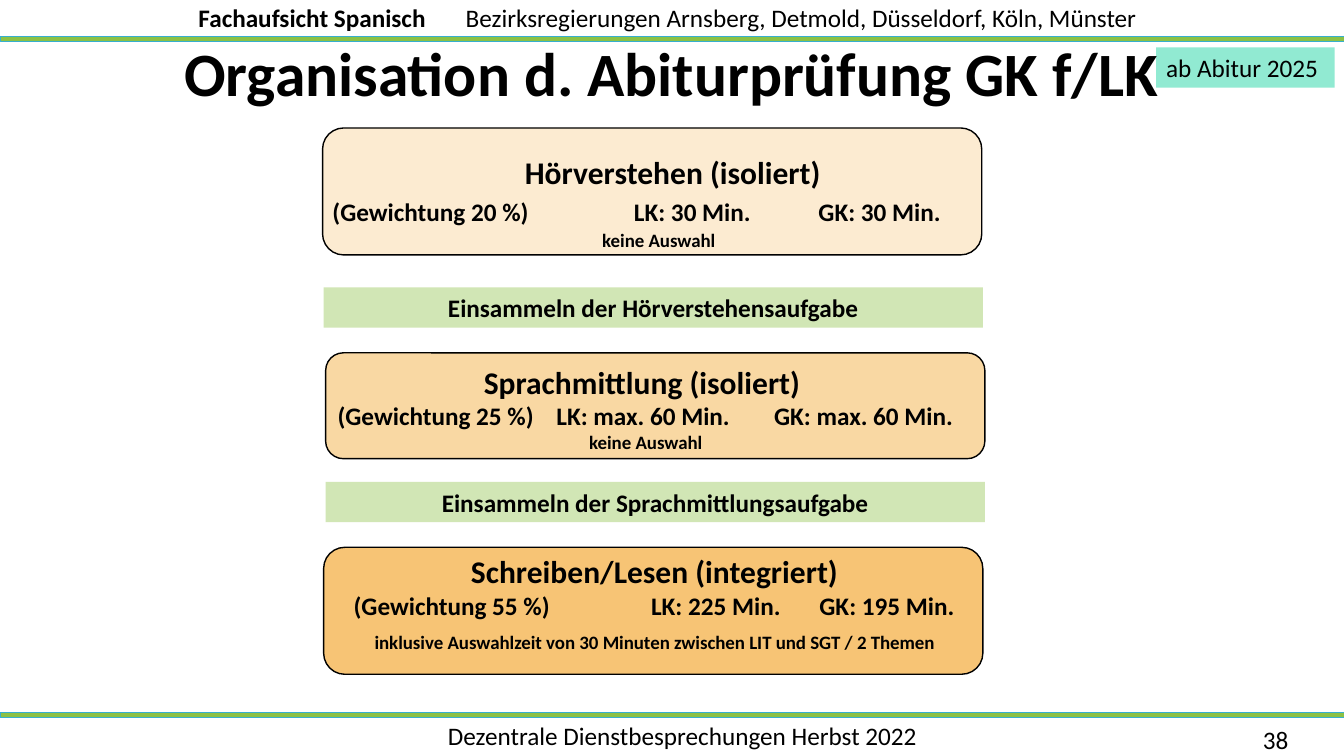
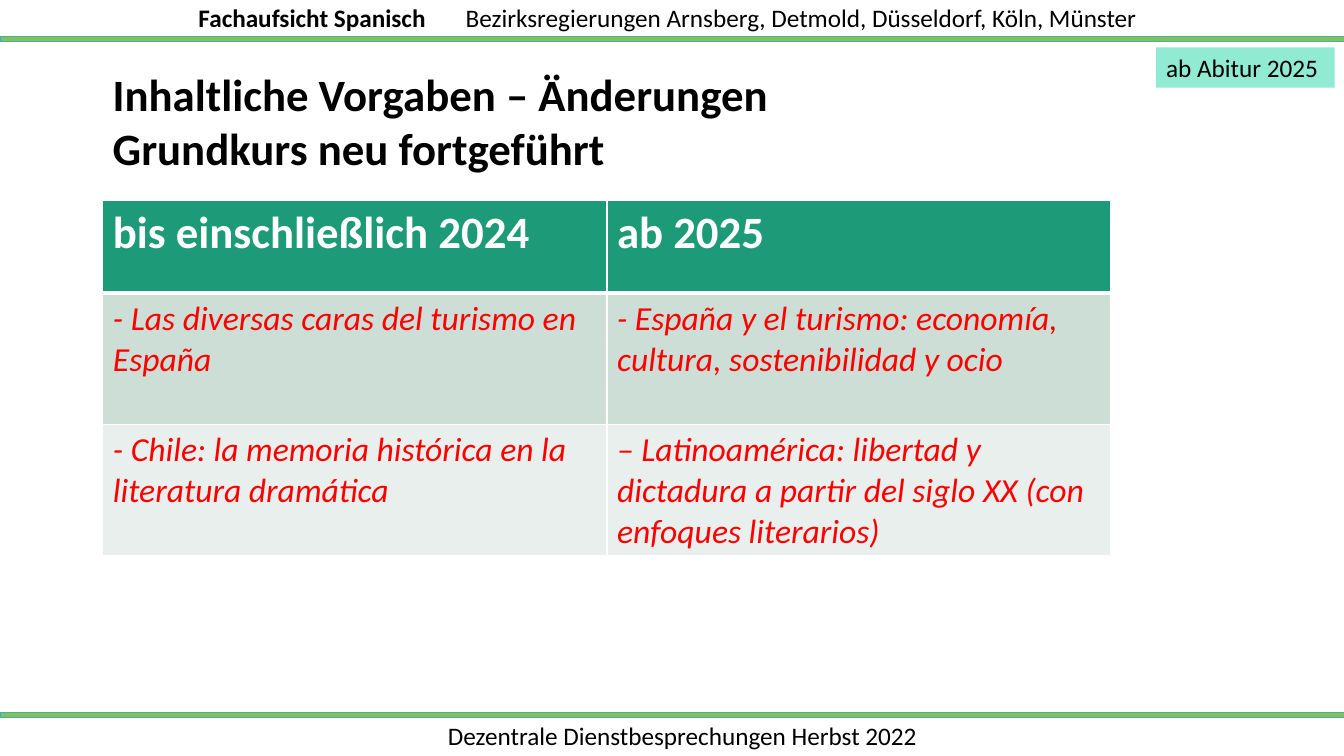
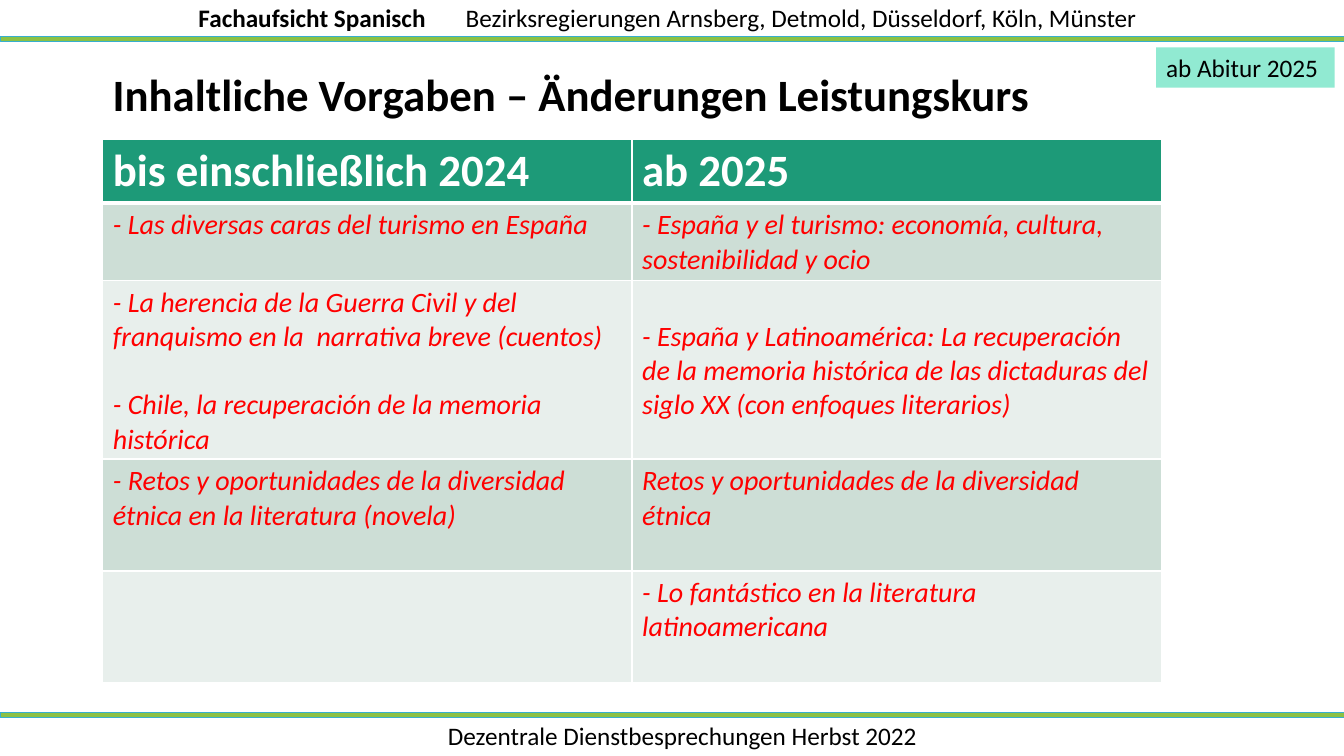
"""Build three slides on the Abitur 2025 changes in Spanish."""
from lxml.etree import SubElement
from pptx import Presentation
from pptx.dml.color import RGBColor
from pptx.enum.shapes import MSO_SHAPE as Shape
from pptx.enum.text import MSO_ANCHOR as Anchor, PP_ALIGN as Align
from pptx.oxml.ns import qn
from pptx.util import Inches, Pt

COLORS = {
    "text": "000000", "white": "FFFFFF", "red": "FF0000",
    "band": "8BC145", "band_edge": "36AFCE", "badge": "91EAD2", "collect": "D1E6B5",
    "listening": "FCEBD1", "mediation": "F9D8A3", "writing": "F7C475",
    "head": "1D9A78", "odd": "CDDED6", "even": "E8EFEC",
}
FONT = "Calibri"
LINE_H = 5.33
PANEL_W = 49.05
TABLE_LEFT = 7.65

deck = Presentation()
deck.slide_width, deck.slide_height = Inches(13.33), Inches(7.5)
COL, ROW = deck.slide_width / 100, deck.slide_height / 100


def add_box(slide, left, top, width, height, fill=None, edge=None, edge_pt=1, kind=Shape.RECTANGLE):
    """Place a box measured in hundredths of the slide and return it."""
    area = int(left * COL), int(top * ROW), int(width * COL), int(height * ROW)
    if fill is None:
        box = slide.shapes.add_textbox(*area)
    else:
        box = slide.shapes.add_shape(kind, *area)
        box.shadow.inherit = False
        box.fill.solid()
        box.fill.fore_color.rgb = RGBColor.from_string(COLORS[fill])
        if edge:
            box.line.color.rgb = RGBColor.from_string(COLORS[edge])
            box.line.width = Pt(edge_pt)
        else:
            box.line.fill.background()
    box.text_frame.word_wrap = True
    return box


def write(frame, text, size=18, bold=False, italic=False, color="text",
          align=Align.LEFT, before=0, tabs=()):
    """Fill the first empty paragraph of a frame, or a new one, and return it."""
    paragraph = frame.paragraphs[0] if not frame.text else frame.add_paragraph()
    paragraph.add_run().text = text
    paragraph.alignment = align
    paragraph.space_before = Pt(before)
    font = paragraph.font
    font.name, font.size, font.bold, font.italic = FONT, Pt(size), bold, italic
    font.color.rgb = RGBColor.from_string(COLORS[color])
    if tabs:
        stops = SubElement(paragraph._p.get_or_add_pPr(), qn("a:tabLst"))
        for stop in tabs:
            SubElement(stops, qn("a:tab"), pos=str(Inches(stop)), algn="l")
        properties = paragraph._p.pPr
        properties.append(properties.find(qn("a:defRPr")))
    return paragraph


slides = [deck.slides.add_slide(deck.slide_layouts[6]) for _ in range(3)]
for slide in slides:
    for band_top in (4.8, 94.27):
        add_box(slide, 0, band_top, 101.5, 0.67, "band", "band_edge", 0.5)
    header = add_box(slide, -0.15, -0.4, 100.15, LINE_H).text_frame
    authority = write(header, "\tFachaufsicht Spanisch", tabs=(1.89, 4.54))
    authority.runs[0].font.bold = True
    authority.add_run().text = "\tBezirksregierungen Arnsberg, Detmold, Düsseldorf, Köln, Münster"
    footer = add_box(slide, 25.35, 94.67, 50.85, LINE_H).text_frame
    write(footer, "Dezentrale Dienstbesprechungen Herbst 2022", align=Align.CENTER)
    badge = add_box(slide, 86.03, 6.27, 13.28, LINE_H, "badge").text_frame
    write(badge, "ab Abitur 2025")

exam, basic_course, advanced_course = slides

title = add_box(exam, 0, 5.33, 100, 9.73).text_frame
title.vertical_anchor = Anchor.MIDDLE
write(title, "Organisation d. Abiturprüfung GK f/LK", 44, True, align=Align.CENTER).line_spacing = 0.9
page_number = add_box(exam, 93.23, 95.2, 6.83, LINE_H).text_frame
page_number.vertical_anchor = Anchor.MIDDLE
write(page_number, "38")

parts = [
    ("listening", (24, 16.93, 16.8), (23.93, 19.6, 50.18, 14.53), "Hörverstehen (isoliert)", 0.28,
     ("(Gewichtung 20 %)", "LK: 30 Min.", "GK: 30 Min."), (0.01, 3, 4.83), 4,
     "keine Auswahl", 1),
    ("mediation", (24.23, 46.67, 14), (23.63, 47.33, 48.83, 13.47), "Sprachmittlung (isoliert) ", 0,
     ("(Gewichtung 25 %)", "LK: max. 60 Min.", "GK: max. 60 Min."), (0.1, 2.27, 4.43), 0,
     "keine Auswahl", 0),
    ("writing", (24.08, 72.4, 16.8), (24.45, 72.4, 48.53, 14.8), "Schreiben/Lesen (integriert)", 0,
     ("(Gewichtung 55 %)", "LK: 225 Min.", "GK: 195 Min."), (0.15, 3.1, 4.77), 0,
     "inklusive Auswahlzeit von 30 Minuten zwischen LIT und SGT / 2 Themen", 7.3),
]
for color, (left, top, height), text_area, name, indent, times, tabs, times_gap, note, note_gap in parts:
    add_box(exam, left, top, PANEL_W, height, color, "text", kind=Shape.ROUNDED_RECTANGLE)
    part = add_box(exam, *text_area).text_frame
    heading = write(part, name, 22.5, True, align=Align.CENTER)
    heading._p.get_or_add_pPr().set("marL", str(Inches(indent)))
    write(part, "\t" + "\t".join(times), 18, True, before=times_gap, tabs=tabs)
    write(part, note, 13.5, True, align=Align.CENTER, before=note_gap)

for left, top, task in ((24.08, 38, "Hörverstehensaufgabe"), (24.23, 63.73, "Sprachmittlungsaufgabe")):
    collect = add_box(exam, left, top, PANEL_W, LINE_H, "collect").text_frame
    write(collect, f"Einsammeln der {task}", bold=True, align=Align.CENTER)

tourism = ("- Las diversas caras del turismo en España",
           "- España y el turismo: economía, cultura, sostenibilidad y ocio")
comparisons = [
    (basic_course, ("Inhaltliche Vorgaben – Änderungen", "Grundkurs neu fortgeführt"), 15.73,
     26.53, 37.51, (12.27, 17.33, 17.33), 24,
     [tourism,
      ("- Chile: la memoria histórica en la literatura dramática",
       "– Latinoamérica: libertad y dictadura a partir del siglo XX (con enfoques literarios)")]),
    (advanced_course, ("Inhaltliche Vorgaben – Änderungen Leistungskurs",), 8.53,
     18.4, 39.38, (8.4, 10.2, 23.6, 14.8, 14.8), 20,
     [tourism,
      ("- La herencia de la Guerra Civil y del franquismo en la  narrativa breve (cuentos)\n"
       "- Chile, la recuperación de la memoria histórica",
       "- España y Latinoamérica: La recuperación de la memoria histórica de las dictaduras "
       "del siglo XX (con enfoques literarios)"),
      ("- Retos y oportunidades de la diversidad étnica en la literatura (novela)",
       "Retos y oportunidades de la diversidad étnica"),
      ("", "- Lo fantástico en la literatura latinoamericana")]),
]
for slide, title_lines, title_height, top, column_width, heights, size, topics in comparisons:
    title = add_box(slide, TABLE_LEFT, 8.13, 91.75, title_height).text_frame
    for line in title_lines:
        write(title, line, 32, True)

    rows = [("bis einschließlich 2024", "ab 2025"), *topics]
    table = slide.shapes.add_table(
        len(rows), 2, int(TABLE_LEFT * COL), int(top * ROW),
        int(2 * column_width * COL), int(sum(heights) * ROW)).table
    for column in table.columns:
        column.width = int(column_width * COL)
    for r, (height, texts) in enumerate(zip(heights, rows)):
        table.rows[r].height = int(height * ROW)
        for c, text in enumerate(texts):
            cell = table.cell(r, c)
            for side in ("lnL", "lnR", "lnT", "lnB"):
                heavy = (r == 0 and side == "lnB") or (r == 1 and side == "lnT")
                border = SubElement(cell._tc.get_or_add_tcPr(), qn(f"a:{side}"),
                                    w=str(Pt(3 if heavy else 1)))
                SubElement(SubElement(border, qn("a:solidFill")), qn("a:srgbClr"), val=COLORS["white"])
            cell.fill.solid()
            shade = "head" if r == 0 else "odd" if r % 2 else "even"
            cell.fill.fore_color.rgb = RGBColor.from_string(COLORS[shade])
            if text.startswith("- España y Latinoamérica"):
                cell.margin_top = Inches(0.05) + Pt(1.22 * size)
            for n, topic in enumerate(text.split("\n")):
                if r == 0:
                    write(cell.text_frame, topic, 32, True, color="white")
                else:
                    write(cell.text_frame, topic, size, italic=True, color="red", before=n * 1.22 * size)

deck.save("out.pptx")
